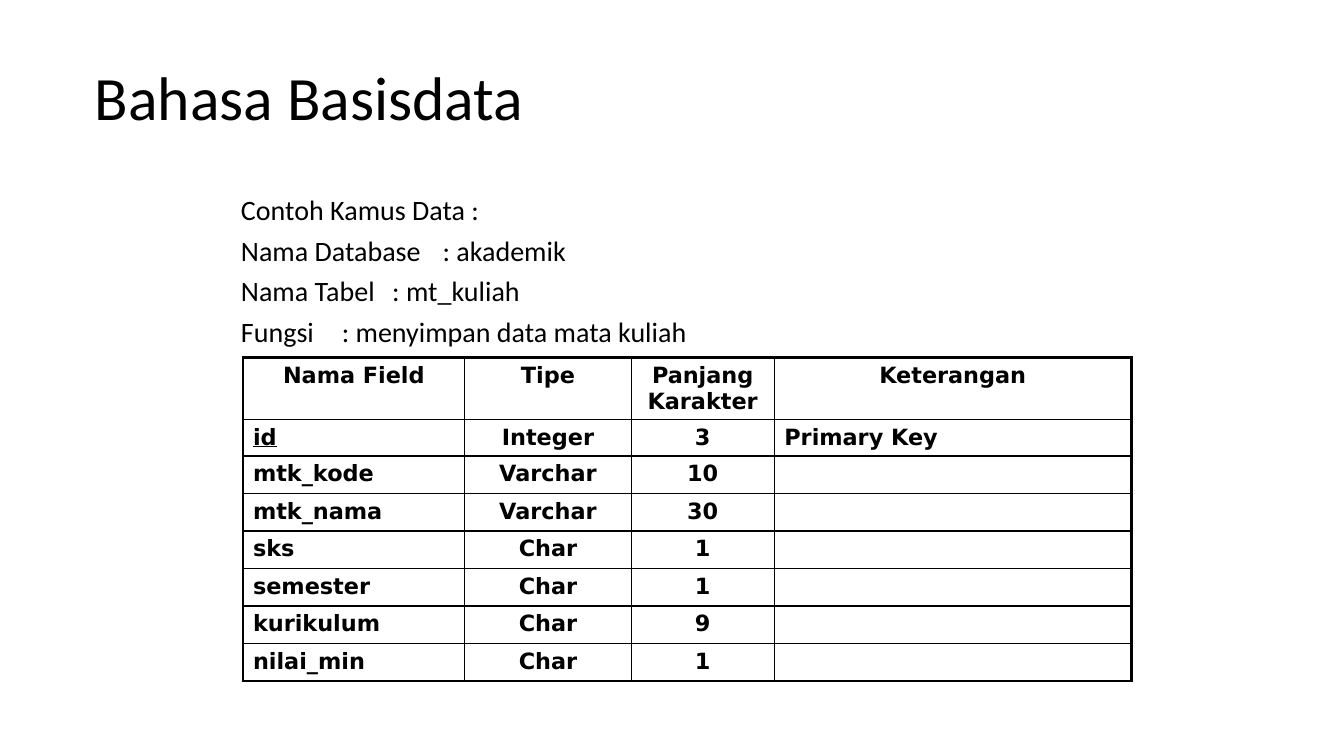
from dataclasses import dataclass
from lxml.etree import SubElement
from pptx import Presentation
from pptx.dml.color import RGBColor
from pptx.enum.text import MSO_ANCHOR, MSO_AUTO_SIZE, PP_ALIGN
from pptx.oxml.ns import qn
from pptx.util import Inches, Pt

TITLE = "Bahasa Basisdata"
DETAILS = [
    ("Contoh Kamus Data :", None),
    ("Nama Database\t: akademik", 1.97),
    ("Nama Tabel\t: mt_kuliah", 2.56),
    ("Fungsi\t: menyimpan data mata kuliah", 2.56),
]
FIELDS = [
    ("Nama Field", "Tipe", "Panjang Karakter", "Keterangan"),
    ("id", "Integer", "3", "Primary Key"),
    ("mtk_kode", "Varchar", "10", ""),
    ("mtk_nama", "Varchar", "30", ""),
    ("sks", "Char", "1", ""),
    ("semester", "Char", "1", ""),
    ("kurikulum", "Char", "9", ""),
    ("nilai_min", "Char", "1", ""),
]
PRIMARY_KEY = "id"
COLUMN_WIDTHS = [2.2, 1.65, 1.42, 3.54]
ROW_HEIGHTS = [0.61] + [0.36] * 4 + [0.37] * 3
CENTRED_COLUMNS = (1, 2)


@dataclass(frozen=True)
class Theme:
    ink: str = "000000"
    text_font: str = "Calibri"
    table_font: str = "DejaVu Sans"
    title_size: int = 44
    detail_size: int = 20
    table_size: int = 16
    outer_line: float = 2.25
    inner_line: float = 1


THEME = Theme()


def place(shape, left, top, width, height):
    shape.left, shape.top = Inches(left), Inches(top)
    shape.width, shape.height = Inches(width), Inches(height)
    shape.text_frame.auto_size = MSO_AUTO_SIZE.NONE


def style(paragraph, font, size, bold=False):
    for run in paragraph.runs:
        run.font.name, run.font.size, run.font.bold = font, Pt(size), bold
        run.font.color.rgb = RGBColor.from_string(THEME.ink)


def add_title(slide):
    title = slide.shapes.title
    place(title, 0.84, 0.33, 11.67, 1.33)
    title.text_frame.text = TITLE
    title.text_frame.vertical_anchor = MSO_ANCHOR.MIDDLE
    heading = title.text_frame.paragraphs[0]
    heading.alignment, heading.line_spacing = PP_ALIGN.LEFT, 0.9
    style(heading, THEME.text_font, THEME.title_size)


def add_details(slide):
    body = slide.placeholders[1]
    place(body, 2.29, 1.92, 9.18, 1.68)
    body.text_frame.text = "\n".join(text for text, _ in DETAILS)
    for index, (detail, (_, colon)) in enumerate(zip(body.text_frame.paragraphs, DETAILS)):
        properties = detail._p.get_or_add_pPr()
        properties.set("marL", "0")
        properties.set("indent", "0")
        SubElement(properties, qn("a:buNone"))
        if colon:
            tabs = SubElement(properties, qn("a:tabLst"))
            SubElement(tabs, qn("a:tab"), pos=str(Inches(colon)), algn="l")
        detail.line_spacing = 0.8
        detail.space_before = Pt(10 if index else 0)
        style(detail, THEME.text_font, THEME.detail_size)


def add_borders(cell, outer_edges):
    properties = cell._tc.get_or_add_tcPr()
    for side, is_outer in zip("LRTB", outer_edges):
        width = THEME.outer_line if is_outer else THEME.inner_line
        border = SubElement(properties, qn(f"a:ln{side}"), w=str(Pt(width)))
        fill = SubElement(border, qn("a:solidFill"))
        SubElement(fill, qn("a:srgbClr"), val=THEME.ink)


def add_field_table(slide):
    last_row, last_column = len(FIELDS) - 1, len(COLUMN_WIDTHS) - 1
    table = slide.shapes.add_table(
        len(FIELDS), len(COLUMN_WIDTHS), Inches(2.41), Inches(3.55),
        Inches(sum(COLUMN_WIDTHS)), Inches(sum(ROW_HEIGHTS))).table
    table.first_row = table.horz_banding = False
    for column, width in zip(table.columns, COLUMN_WIDTHS):
        column.width = Inches(width)
    for row, height in zip(table.rows, ROW_HEIGHTS):
        row.height = Inches(height)
    for r, field in enumerate(FIELDS):
        for c, text in enumerate(field):
            cell = table.cell(r, c)
            add_borders(cell, (c == 0, c == last_column, r == 0, r == last_row))
            cell.fill.background()
            entry = cell.text_frame.paragraphs[0]
            centred = r == 0 or c in CENTRED_COLUMNS
            entry.alignment = PP_ALIGN.CENTER if centred else PP_ALIGN.LEFT
            if text:
                entry.text = text
                style(entry, THEME.table_font, THEME.table_size, bold=True)
            else:
                SubElement(entry._p, qn("a:endParaRPr"), sz=str(THEME.table_size * 100))
            if text == PRIMARY_KEY:
                entry.runs[0].font.underline = True


def main():
    """Build the data dictionary slide."""
    deck = Presentation()
    deck.slide_width, deck.slide_height = Inches(13.33), Inches(7.5)
    slide = deck.slides.add_slide(deck.slide_layouts[1])
    add_title(slide)
    add_details(slide)
    add_field_table(slide)
    deck.save("out.pptx")


if __name__ == "__main__":
    main()
